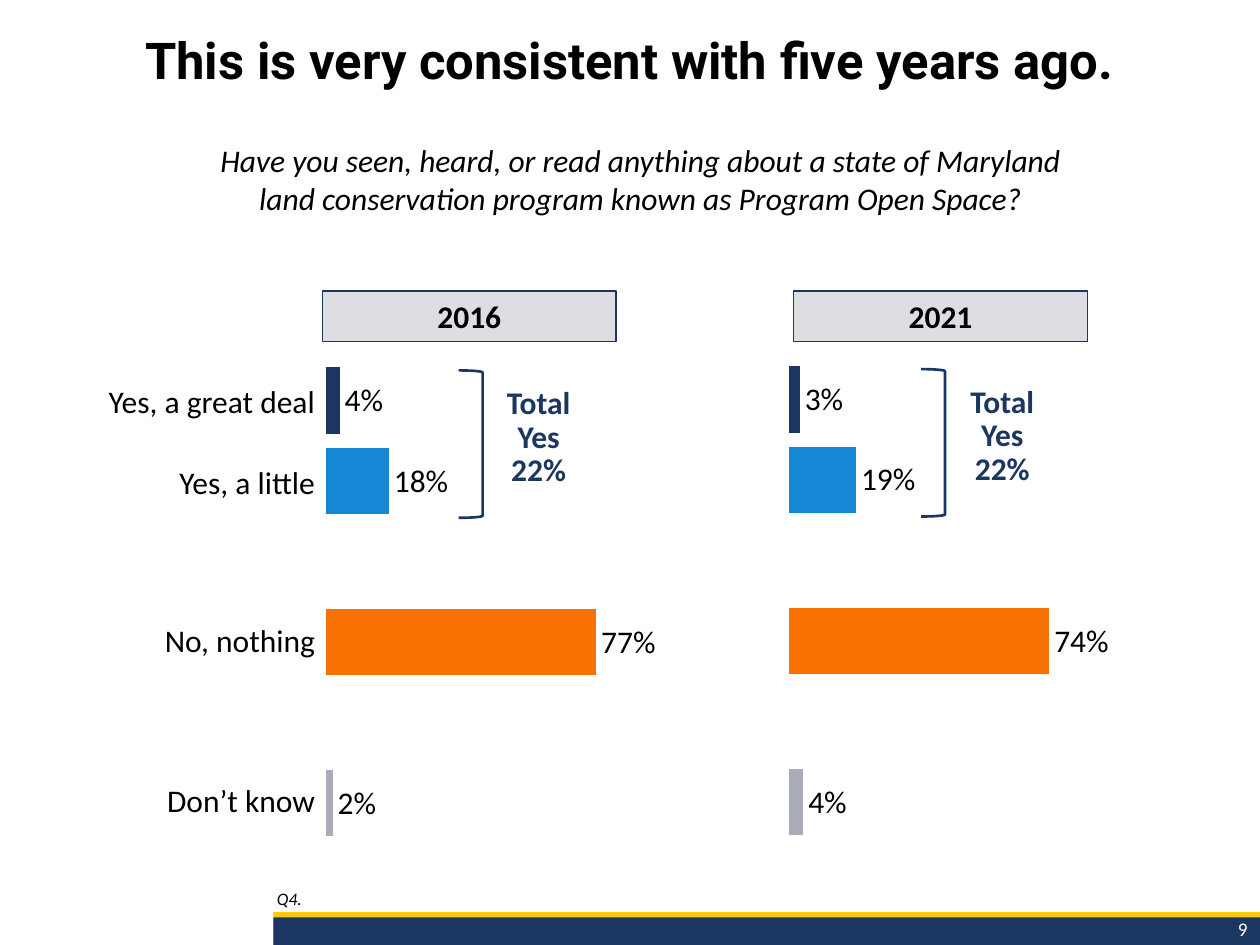
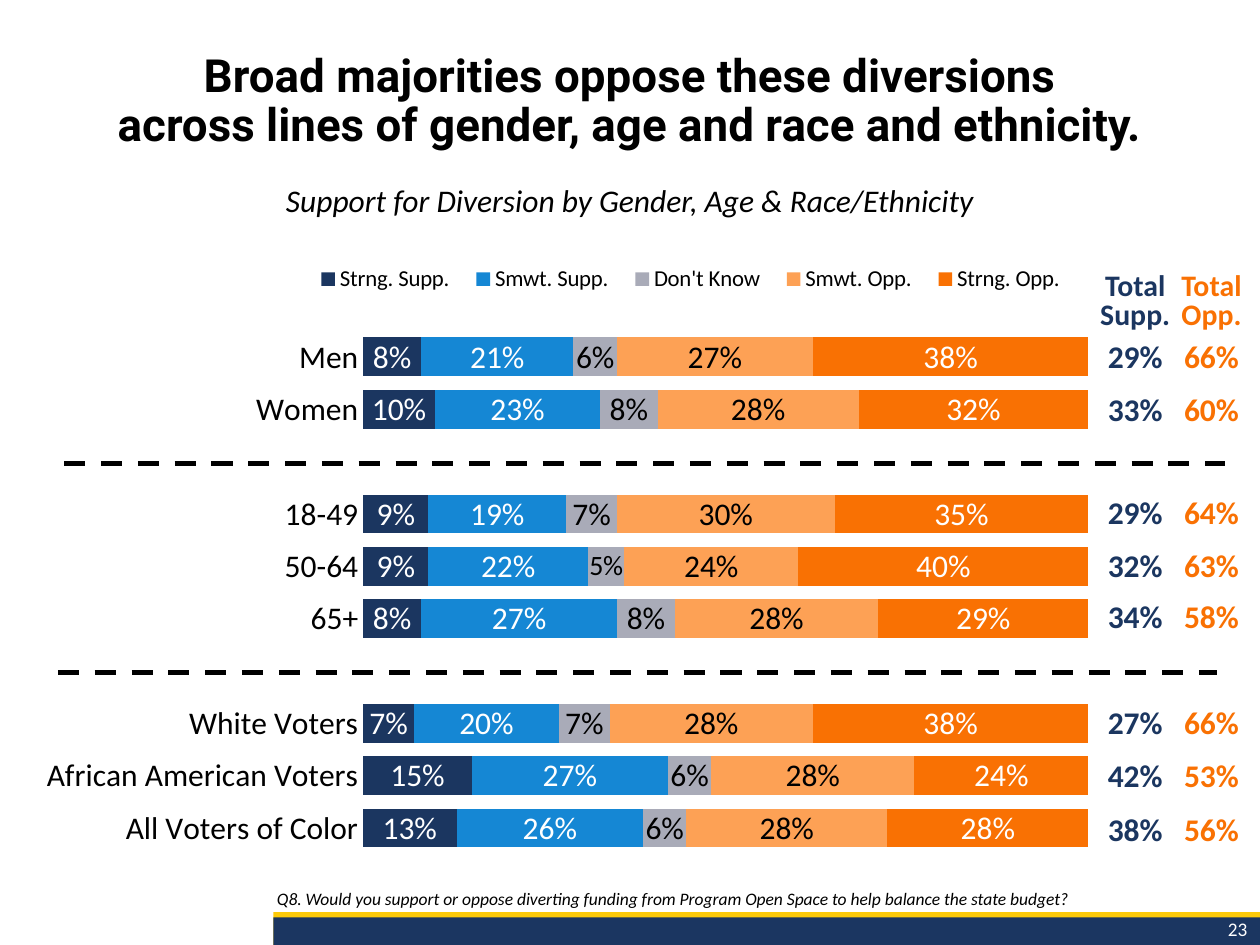
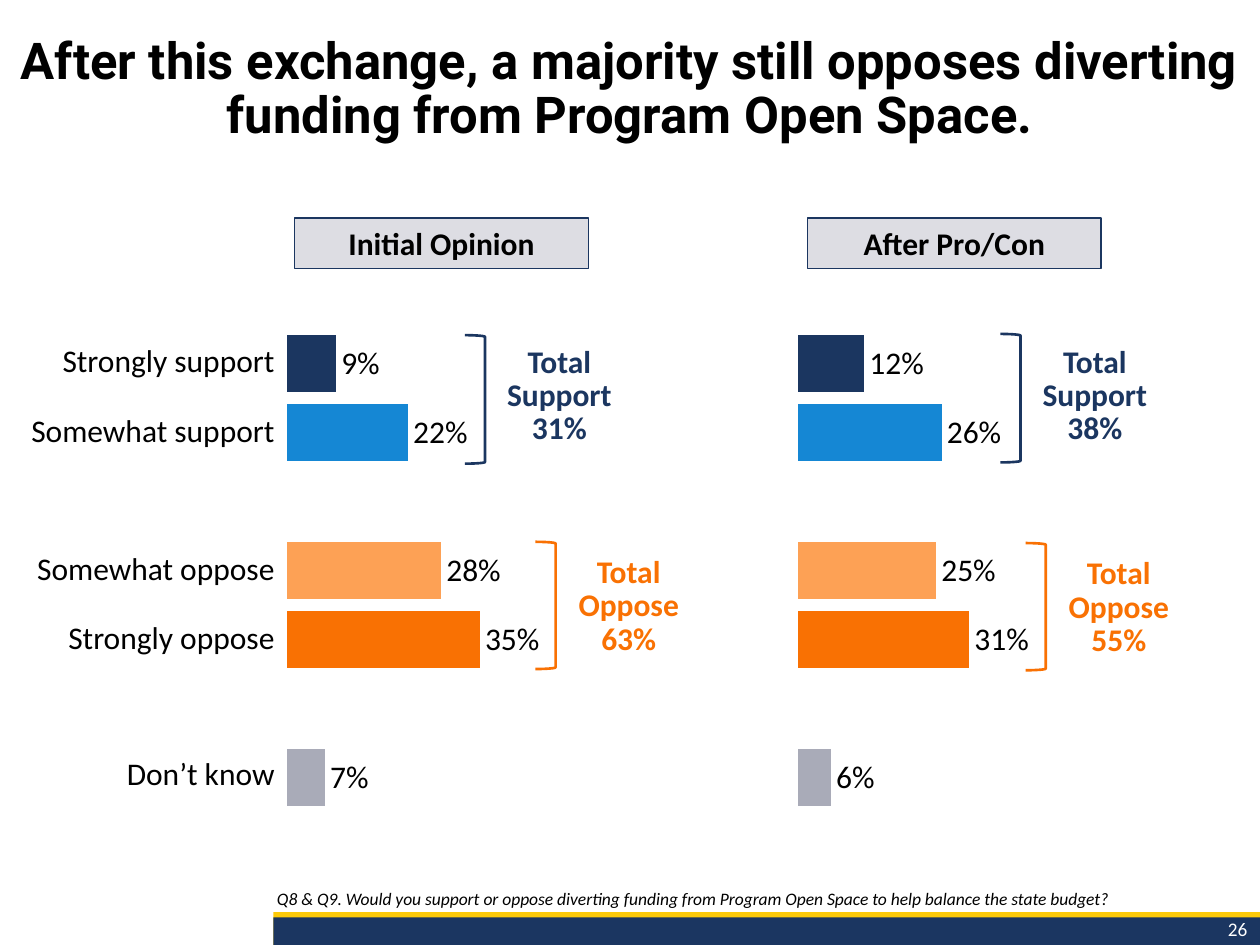
from copy import deepcopy
from dataclasses import dataclass
from typing import Any, NamedTuple, Optional

from pptx import Presentation
from pptx.chart.chart import Chart
from pptx.chart.data import CategoryChartData
from pptx.dml.color import RGBColor
from pptx.enum.chart import (XL_CHART_TYPE, XL_LABEL_POSITION, XL_LEGEND_POSITION,
                             XL_TICK_LABEL_POSITION, XL_TICK_MARK)
from pptx.enum.dml import MSO_LINE
from pptx.enum.shapes import MSO_CONNECTOR, MSO_SHAPE
from pptx.enum.text import MSO_ANCHOR, MSO_AUTO_SIZE, PP_ALIGN
from pptx.oxml.ns import qn
from pptx.oxml.xmlchemy import OxmlElement
from pptx.slide import Slide
from pptx.table import _Cell
from pptx.text.text import TextFrame
from pptx.util import Emu, Pt

CLUSTERED, STACKED = XL_CHART_TYPE.BAR_CLUSTERED, XL_CHART_TYPE.BAR_STACKED_100
LEFT, CENTER, RIGHT = PP_ALIGN.LEFT, PP_ALIGN.CENTER, PP_ALIGN.RIGHT
TOP, MIDDLE, BOTTOM = MSO_ANCHOR.TOP, MSO_ANCHOR.MIDDLE, MSO_ANCHOR.BOTTOM
RECTANGLE, BRACKET = MSO_SHAPE.RECTANGLE, MSO_SHAPE.RIGHT_BRACKET
TITLE_ONLY = 5
PLAIN_TABLE = "{2D5ABB26-0587-4C30-8999-92F81FD0307C}"
PERCENT = "0%"
EMU_PER_PX = 9144  # 100 px to the inch


@dataclass(frozen=True)
class Theme:
    title_font: str = "Roboto"
    body_font: str = "Calibri"
    black: str = "000000"
    white: str = "FFFFFF"
    band_navy: str = "1B3661"
    gold: str = "FCCA09"
    navy: str = "1B3660"
    blue: str = "1587D4"
    gray: str = "A9ABB8"
    light_orange: str = "FDA155"
    orange: str = "F97103"
    heading_fill: str = "DDDDE3"
    title: float = 29
    small_title: float = 26.1
    body: float = 18
    total_heading: float = 17
    tight_label: float = 16
    legend: float = 13
    page: float = 11
    note: float = 10


THEME = Theme()


class Box(NamedTuple):
    left: int
    top: int
    width: int
    height: int


class TextStyle(NamedTuple):
    size: float = THEME.body
    color: str = THEME.black
    bold: bool = False
    italic: bool = False
    font: str = THEME.body_font
    align: Any = CENTER
    anchor: Any = TOP
    spacing: Any = None


@dataclass(frozen=True)
class Total:
    """A bracket with the sum of the bars it spans."""
    bracket: Box
    label: str
    label_box: Box
    color: str


@dataclass(frozen=True)
class Panel:
    """One headed bar chart of a side-by-side comparison."""
    heading: str
    heading_box: Box
    chart_box: Box
    values: tuple[Optional[float], ...]
    totals: tuple[Total, ...]


@dataclass(frozen=True)
class Comparison:
    """Two panels sharing row labels, bar colours and a scale."""
    labels: tuple[str, ...]
    label_left: int
    label_top: int
    row_heights: tuple[int, ...]
    label_width: int
    colors: tuple[str, ...]
    maximum: float
    plot_width: float
    panels: tuple[Panel, ...]


class Answer(NamedTuple):
    name: str
    color: str
    label_color: str
    values: tuple[Optional[float], ...]


# ---- Shared helpers ----
def px(length: int) -> Emu:
    return Emu(length * EMU_PER_PX)


def place(box: Box) -> tuple[Emu, ...]:
    return tuple(px(length) for length in box)


def rgb(color: str) -> RGBColor:
    return RGBColor.from_string(color)


def assign(target: Any, values: dict[str, Any]) -> None:
    for name, value in values.items():
        setattr(target, name, value)


def format_font(font: Any, style: TextStyle) -> None:
    assign(font, {"name": style.font, "size": Pt(style.size),
                  "bold": style.bold, "italic": style.italic})
    font.color.rgb = rgb(style.color)


def write(frame: TextFrame, text: str, style: TextStyle) -> None:
    paragraph = frame.paragraphs[0]
    paragraph.text = text
    paragraph.alignment = style.align
    if style.spacing is not None:
        paragraph.line_spacing = style.spacing
    for run in paragraph.runs:
        format_font(run.font, style)
    # Line breaks take the size of the text around them
    for line_break in paragraph._p.findall(qn("a:br")):
        line_break.insert(0, deepcopy(paragraph.runs[0].font._rPr))


def fill_frame(frame: TextFrame, text: str, style: TextStyle) -> None:
    assign(frame, {"word_wrap": True, "auto_size": MSO_AUTO_SIZE.NONE,
                   "vertical_anchor": style.anchor})
    write(frame, text, style)


def add_text(slide: Slide, box: Box, text: str, style: TextStyle) -> None:
    fill_frame(slide.shapes.add_textbox(*place(box)).text_frame, text, style)


def add_shape(slide: Slide, kind: Any, box: Box, fill: Optional[str] = None,
              line: Optional[str] = None, line_width: float = 0.75) -> Any:
    shape = slide.shapes.add_shape(kind, *place(box))
    shape.shadow.inherit = False
    if fill:
        shape.fill.solid()
        shape.fill.fore_color.rgb = rgb(fill)
    else:
        shape.fill.background()
    if line:
        shape.line.color.rgb = rgb(line)
        shape.line.width = Pt(line_width)
    else:
        shape.line.fill.background()
    return shape


QUESTION = TextStyle(italic=True)
HEADING = TextStyle(bold=True, anchor=MIDDLE)
ROW_LABEL = TextStyle(align=RIGHT)
NOTE = TextStyle(THEME.note, italic=True, align=LEFT, anchor=BOTTOM, spacing=0.9)
PAGE = TextStyle(THEME.page, THEME.white, align=RIGHT)


def start_slide(presentation: Any, title: str, page: int, note: str,
                title_top: int = 23, title_size: float = THEME.title) -> Slide:
    slide = presentation.slides.add_slide(presentation.slide_layouts[TITLE_ONLY])
    heading = slide.shapes.title
    box = place(Box(0, title_top, 1000, 122))
    assign(heading, dict(zip(("left", "top", "width", "height"), box)))
    fill_frame(heading.text_frame, title,
               TextStyle(title_size, bold=True, font=THEME.title_font, spacing=0.9))
    add_shape(slide, RECTANGLE, Box(217, 724, 783, 26), THEME.gold)
    add_shape(slide, RECTANGLE, Box(217, 728, 783, 22), THEME.band_navy)
    add_text(slide, Box(854, 723, 146, 27), str(page), PAGE)
    add_text(slide, Box(210, 673, 786, 54), note, NOTE)
    return slide


# ---- Tables ----
def add_plain_table(slide: Slide, left: int, top: int, widths: tuple[int, ...],
                    heights: tuple[int, ...]) -> Any:
    box = Box(left, top, sum(widths), sum(heights))
    table = slide.shapes.add_table(len(heights), len(widths), *place(box)).table
    assign(table, {"first_row": False, "horz_banding": False})
    table._tbl.tblPr.find(qn("a:tableStyleId")).text = PLAIN_TABLE
    for column, width in zip(table.columns, widths):
        column.width = px(width)
    for row, height in zip(table.rows, heights):
        row.height = px(height)
    for cell in table.iter_cells():
        cell.fill.background()
        assign(cell, {"margin_left": px(1), "margin_right": px(1), "margin_top": px(1),
                      "margin_bottom": 0, "vertical_anchor": BOTTOM})
    return table


def write_cell(cell: _Cell, text: str, style: TextStyle) -> None:
    if text:
        write(cell.text_frame, text, style)


# ---- Charts ----
def set_layout(parent: Any, index: int, area: tuple[float, ...], inner: bool) -> None:
    for old in parent.findall(qn("c:layout")):
        parent.remove(old)
    layout = OxmlElement("c:layout")
    manual = OxmlElement("c:manualLayout")
    layout.append(manual)
    settings = [("layoutTarget", "inner")] if inner else []
    settings += [("xMode", "edge"), ("yMode", "edge"), *zip("xywh", area)]
    for name, value in settings:
        item = OxmlElement(f"c:{name}")
        item.set("val", str(value))
        manual.append(item)
    parent.insert(index, layout)


def add_bar_chart(slide: Slide, kind: Any, box: Box, categories: tuple[str, ...],
                  answers: tuple[Answer, ...], maximum: float, major: float,
                  gap: int, area: tuple[float, ...]) -> Chart:
    data = CategoryChartData(number_format=PERCENT)
    data.categories = categories
    for answer in answers:
        data.add_series(answer.name, answer.values)
    chart = slide.shapes.add_chart(kind, *place(box), data).chart
    chart.has_title = False
    chart.has_legend = False
    format_font(chart.font, TextStyle())
    assign(chart.value_axis, {"visible": False, "has_major_gridlines": False,
                              "minimum_scale": 0, "maximum_scale": maximum,
                              "major_unit": major})
    axis = chart.category_axis
    assign(axis, {"reverse_order": True, "major_tick_mark": XL_TICK_MARK.NONE,
                  "minor_tick_mark": XL_TICK_MARK.NONE, "has_major_gridlines": False})
    axis.format.line.fill.background()
    format_font(axis.tick_labels.font, TextStyle())
    assign(chart.plots[0], {"gap_width": gap, "vary_by_categories": False})
    for series, answer in zip(chart.plots[0].series, answers):
        series.format.fill.solid()
        series.format.fill.fore_color.rgb = rgb(answer.color)
        assign(series.data_labels, {"show_value": True, "number_format": PERCENT,
                                    "number_format_is_linked": False})
        format_font(series.data_labels.font, TextStyle(color=answer.label_color))
    set_layout(chart.element.find(".//" + qn("c:plotArea")), 0, area, True)
    return chart


# ---- Side-by-side comparisons ----
def draw_panel(slide: Slide, panel: Panel, comparison: Comparison) -> None:
    categories = tuple(str(number + 1) for number in range(len(panel.values)))
    answer = Answer("Series 1", THEME.blue, THEME.black, panel.values)
    chart = add_bar_chart(slide, CLUSTERED, panel.chart_box, categories, (answer,),
                          comparison.maximum, 0.15, 21,
                          (0.047, 0.019, comparison.plot_width, 0.911))
    chart.category_axis.tick_label_position = XL_TICK_LABEL_POSITION.NONE
    series = chart.plots[0].series[0]
    series.data_labels.position = XL_LABEL_POSITION.OUTSIDE_END
    for index, color in enumerate(comparison.colors):
        if color:
            fill = series.points[index].format.fill
            fill.solid()
            fill.fore_color.rgb = rgb(color)
    heading = add_shape(slide, RECTANGLE, panel.heading_box, THEME.heading_fill, THEME.navy)
    fill_frame(heading.text_frame, panel.heading, HEADING)
    for total in panel.totals:
        add_shape(slide, BRACKET, total.bracket, line=total.color, line_width=1.5)
        add_text(slide, total.label_box, total.label,
                 TextStyle(color=total.color, bold=True, spacing=Pt(19)))


def draw_comparison(slide: Slide, comparison: Comparison) -> None:
    for panel in comparison.panels:
        draw_panel(slide, panel, comparison)
    table = add_plain_table(slide, comparison.label_left, comparison.label_top,
                            (comparison.label_width,), comparison.row_heights)
    for cell, label in zip(table.iter_cells(), comparison.labels):
        write_cell(cell, label, ROW_LABEL)


AWARENESS = Comparison(
    ("Yes, a great deal", "Yes, a little", "", "No, nothing", "", "Don’t know"),
    40, 303, (31, 65, 51, 74, 55, 72), 211,
    (THEME.navy, THEME.blue, "", THEME.orange, "", THEME.gray), 0.9, 0.878,
    (Panel("2016", Box(256, 231, 233, 40), Box(245, 278, 286, 421),
           (0.04, 0.18, None, 0.77, None, 0.02),
           (Total(Box(364, 294, 19, 117), "Total Yes\n22%", Box(377, 303, 101, 90), THEME.navy),)),
     Panel("2021", Box(630, 231, 233, 40), Box(613, 277, 286, 421),
           (0.03, 0.19, None, 0.74, None, 0.04),
           (Total(Box(731, 293, 19, 117), "Total Yes\n22%", Box(745, 302, 101, 90), THEME.navy),))))

DIVERSION = Comparison(
    ("Strongly support", "Somewhat support", "", "Somewhat oppose", "Strongly oppose", "",
     "Don’t know"),
    8, 271, (31, 55, 51, 59, 55, 51, 57), 211,
    (THEME.navy, THEME.blue, "", THEME.light_orange, THEME.orange, "", THEME.gray), 0.6, 0.921,
    (Panel("Initial Opinion", Box(234, 173, 233, 40), Box(214, 253, 286, 421),
           (0.09, 0.22, None, 0.28, 0.35, None, 0.07),
           (Total(Box(369, 266, 16, 102), "Total Support\n31%", Box(379, 270, 130, 90),
                  THEME.navy),
            Total(Box(425, 430, 16, 101), "Total Oppose\n63%", Box(429, 437, 140, 90),
                  THEME.orange))),
     Panel("After Pro/Con", Box(641, 173, 233, 40), Box(620, 253, 286, 421),
           (0.12, 0.26, None, 0.25, 0.31, None, 0.06),
           (Total(Box(794, 265, 16, 102), "Total Support\n38%", Box(804, 270, 130, 90),
                  THEME.navy),
            Total(Box(814, 431, 16, 101), "Total Oppose\n55%", Box(818, 438, 140, 90),
                  THEME.orange)))))

# ---- Demographic breakdown ----
GROUPS = ("Men", "Women", "", "18-49", "50-64", "65+", "",
          "White Voters", "African American Voters", "All Voters of Color")
ANSWERS = (
    Answer("Strng. Supp.", THEME.navy, THEME.white,
           (0.08, 0.1, None, 0.09, 0.09, 0.08, None, 0.07, 0.15, 0.13)),
    Answer("Smwt. Supp.", THEME.blue, THEME.white,
           (0.21, 0.23, None, 0.19, 0.22, 0.27, None, 0.2, 0.27, 0.26)),
    Answer("Don't Know", THEME.gray, THEME.black,
           (0.06, 0.08, None, 0.07, 0.05, 0.08, None, 0.07, 0.06, 0.06)),
    Answer("Smwt. Opp.", THEME.light_orange, THEME.black,
           (0.27, 0.28, None, 0.3, 0.24, 0.28, None, 0.28, 0.28, 0.28)),
    Answer("Strng. Opp.", THEME.orange, THEME.white,
           (0.38, 0.32, None, 0.35, 0.4, 0.29, None, 0.38, 0.24, 0.28)))
TOTAL_ROWS = (("Total Supp.", "Total Opp."), ("29%", "66%"), ("33%", "60%"), ("", ""),
              ("29%", "64%"), ("32%", "63%"), ("34%", "58%"), ("", ""),
              ("27%", "66%"), ("42%", "53%"), ("38%", "56%"))
TOTAL_HEIGHTS = (51, 34, 42, 45, 37, 42, 41, 50, 34, 42, 43)


def add_divider(slide: Slide, left: int, right: int, top: int) -> None:
    line = slide.shapes.add_connector(MSO_CONNECTOR.STRAIGHT,
                                      px(left), px(top), px(right), px(top))
    line.line.color.rgb = rgb(THEME.black)
    assign(line.line, {"width": Pt(3), "dash_style": MSO_LINE.DASH})
    line._element.spPr.append(OxmlElement("a:effectLst"))


def draw_breakdown(slide: Slide) -> None:
    add_divider(slide, 51, 972, 368)
    add_divider(slide, 46, 966, 534)
    chart = add_bar_chart(slide, STACKED, Box(0, 189, 921, 500), GROUPS, ANSWERS,
                          1, 0.2, 35, (0.313, 0.147, 0.625, 0.831))
    chart.plots[0].overlap = 100
    chart.has_legend = True
    assign(chart.legend, {"position": XL_LEGEND_POSITION.TOP, "include_in_layout": False})
    format_font(chart.legend.font, TextStyle(THEME.legend))
    set_layout(chart.element.find(".//" + qn("c:legend")), 1, (0.26, 0.03, 0.67, 0.07), False)
    # The narrowest segment takes a smaller label
    narrow = chart.plots[0].series[2].points[GROUPS.index("50-64")].data_label
    format_font(narrow.font, TextStyle(THEME.tight_label))

    table = add_plain_table(slide, 868, 214, (66, 55), TOTAL_HEIGHTS)
    for row, texts in enumerate(TOTAL_ROWS):
        size, spacing = (THEME.body, None) if row else (THEME.total_heading, Pt(17))
        for column, color in enumerate((THEME.navy, THEME.orange)):
            write_cell(table.cell(row, column), texts[column],
                       TextStyle(size, color, bold=True, spacing=spacing))


def main() -> None:
    presentation = Presentation()
    assign(presentation, {"slide_width": px(1000), "slide_height": px(750)})

    slide = start_slide(presentation, "This is very consistent with five years ago.", 9, "Q4.")
    add_text(slide, Box(146, 107, 725, 71),
             "Have you seen, heard, or read anything about a state of Maryland "
             "land conservation program known as Program Open Space?", QUESTION)
    draw_comparison(slide, AWARENESS)

    question = ("Would you support or oppose diverting funding from Program Open Space "
                "to help balance the state budget?")
    slide = start_slide(presentation, "Broad majorities oppose these diversions\n"
                        "across lines of gender, age and race and ethnicity.",
                        23, f"Q8. {question}", 37, THEME.small_title)
    add_text(slide, Box(138, 139, 724, 40),
             "Support for Diversion by Gender, Age & Race/Ethnicity", QUESTION)
    draw_breakdown(slide)

    slide = start_slide(presentation, "After this exchange, a majority still opposes "
                        "diverting funding from Program Open Space.",
                        26, f"Q8 & Q9. {question}")
    draw_comparison(slide, DIVERSION)
    presentation.save("out.pptx")


if __name__ == "__main__":
    main()
